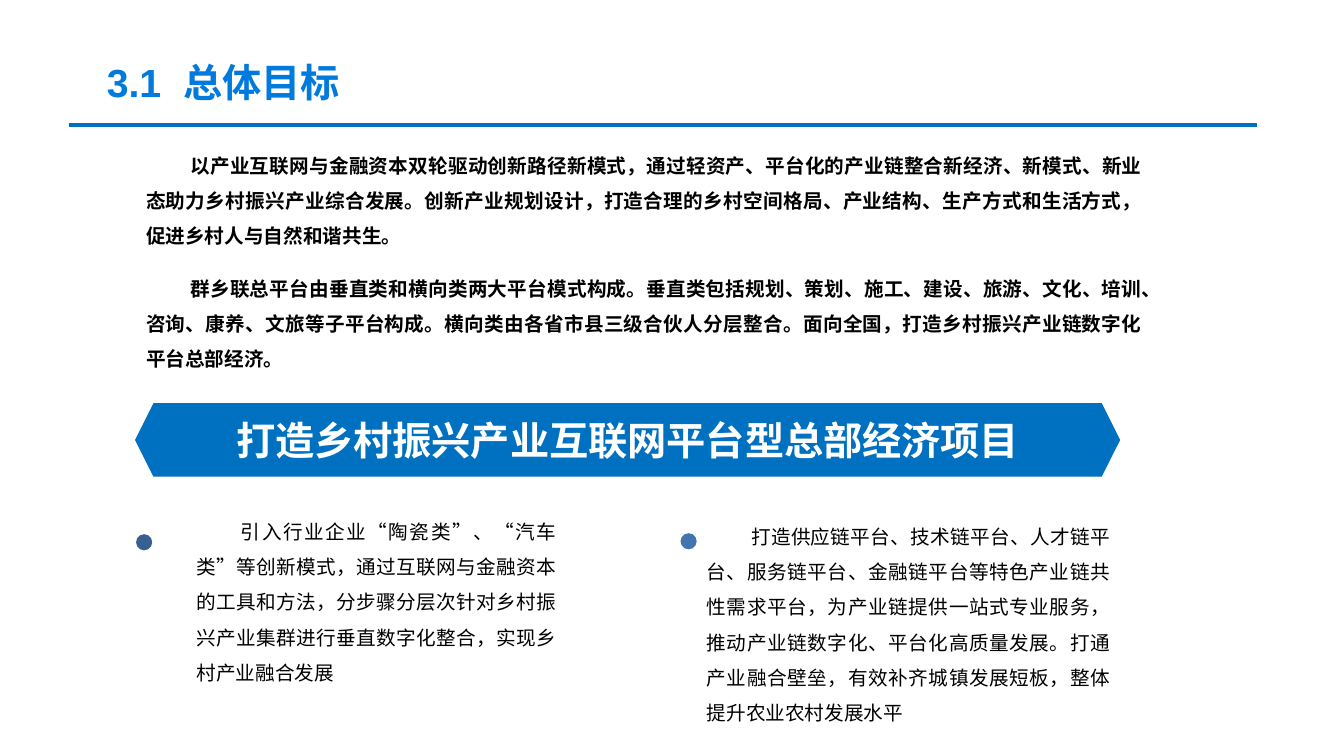
from dataclasses import dataclass

from lxml.etree import SubElement
from pptx import Presentation
from pptx.dml.color import RGBColor
from pptx.enum.shapes import MSO_CONNECTOR, MSO_SHAPE
from pptx.enum.text import MSO_ANCHOR, MSO_AUTO_SIZE, PP_ALIGN
from pptx.oxml.ns import qn
from pptx.util import Inches, Pt

COLORS = {
    "title": "007ADD",
    "blue": "0070C0",
    "black": "000000",
    "white": "FFFFFF",
    "left_dot": "376092",
    "right_dot": "4274B0",
}
FONT = "Arial"
DOT_SIZE = 0.16
TITLE_PARTS = ["3.1", " ", "总体目标"]
BANNER = "打造乡村振兴产业互联网平台型总部经济项目"
INTRO = [
    "以产业互联网与金融资本双轮驱动创新路径新模式，通过轻资产、平台化的产业链整合新经济、新模式、新业态助力乡村振兴产业综合发展。创新产业规划设计，打造合理的乡村空间格局、产业结构、生产方式和生活方式，促进乡村人与自然和谐共生。",
    "群乡联总平台由垂直类和横向类两大平台模式构成。垂直类包括规划、策划、施工、建设、旅游、文化、培训、咨询、康养、文旅等子平台构成。横向类由各省市县三级合伙人分层整合。面向全国，打造乡村振兴产业链数字化平台总部经济。",
]


@dataclass
class Point:
    placeholder: int
    left: float
    width: float
    height: float
    inset_x: float
    inset_y: float
    dot_left: float
    dot_top: float
    dot_color: str
    text: str


POINTS = [
    Point(1, 1.95, 3.57, 1.77, 0, 0, 1.35, 5.3, "left_dot",
          "引入行业企业“陶瓷类”、“汽车类”等创新模式，通过互联网与金融资本的工具和方法，分步骤分层次针对乡村振兴产业集群进行垂直数字化整合，实现乡村产业融合发展"),
    Point(2, 6.91, 4.2, 2.22, 0.1, 0.05, 6.75, 5.29, "right_dot",
          "打造供应链平台、技术链平台、人才链平台、服务链平台、金融链平台等特色产业链共性需求平台，为产业链提供一站式专业服务，推动产业链数字化、平台化高质量发展。打通产业融合壁垒，有效补齐城镇发展短板，整体提升农业农村发展水平"),
]


def color(name: str) -> RGBColor:
    return RGBColor.from_string(COLORS[name])


def place(box, left: float, top: float, width: float, height: float) -> None:
    box.left, box.top = Inches(left), Inches(top)
    box.width, box.height = Inches(width), Inches(height)


def set_frame(frame, inset_x: float, inset_y: float, anchor=MSO_ANCHOR.TOP) -> None:
    frame.word_wrap = True
    frame.auto_size = MSO_AUTO_SIZE.NONE
    frame.vertical_anchor = anchor
    frame.margin_left = frame.margin_right = Inches(inset_x)
    frame.margin_top = frame.margin_bottom = Inches(inset_y)


def set_font(para, size: float, color_name: str, bold: bool) -> None:
    para.font.name = FONT
    para.font.size = Pt(size)
    para.font.bold = bold
    para.font.color.rgb = color(color_name)


def write_body(frame, texts: list[str], bold: bool) -> None:
    for index, text in enumerate(texts):
        para = frame.paragraphs[0] if index == 0 else frame.add_paragraph()
        para.text = text
        para.alignment = PP_ALIGN.JUSTIFY
        para.line_spacing = 1.5
        para.space_before = Pt(6 if index else 0)
        para.space_after = Pt(6)
        properties = para._p.get_or_add_pPr()
        properties.set("marL", "0")
        properties.set("indent", str(Inches(0.44)))
        SubElement(properties, qn("a:buNone"))
        set_font(para, 14, "black", bold)


def add_solid(page, kind, left: float, top: float, width: float, height: float, fill: str):
    shape = page.shapes.add_shape(kind, Inches(left), Inches(top), Inches(width), Inches(height))
    shape.shadow.inherit = False
    shape.fill.solid()
    shape.fill.fore_color.rgb = color(fill)
    shape.line.fill.background()
    return shape


def add_title(page) -> None:
    title = page.shapes.title
    place(title, 0.96, 0.53, 2.75, 0.57)
    set_frame(title.text_frame, 0.1, 0.05)
    para = title.text_frame.paragraphs[0]
    para.alignment = PP_ALIGN.LEFT
    for part in TITLE_PARTS:
        span = para.add_run()
        span.text = part
        if part == " ":
            span._r.get_or_add_rPr().set("spc", "780")
    set_font(para, 28, "title", True)


def add_rule(page) -> None:
    rule = page.shapes.add_connector(
        MSO_CONNECTOR.STRAIGHT, Inches(0.68), Inches(1.24), Inches(12.47), Inches(1.24))
    rule.line.color.rgb = color("blue")
    rule.line.width = Pt(3.25)
    SubElement(rule._element.spPr, qn("a:effectLst"))


def add_banner(page) -> None:
    banner = add_solid(page, MSO_SHAPE.HEXAGON, 1.34, 4, 9.77, 0.73, "blue")
    banner.adjustments[0] = 0.25
    set_frame(banner.text_frame, 0, 0, MSO_ANCHOR.MIDDLE)
    para = banner.text_frame.paragraphs[0]
    para.text = BANNER
    para.alignment = PP_ALIGN.CENTER
    set_font(para, 28, "white", True)


def add_intro(page) -> None:
    intro = page.shapes.add_textbox(Inches(1.35), Inches(1.36), Inches(10.08), Inches(2.39))
    set_frame(intro.text_frame, 0.1, 0.05)
    write_body(intro.text_frame, INTRO, True)


def add_point(page, point: Point) -> None:
    add_solid(page, MSO_SHAPE.OVAL, point.dot_left, point.dot_top, DOT_SIZE, DOT_SIZE, point.dot_color)
    box = page.placeholders[point.placeholder]
    place(box, point.left, 5.04, point.width, point.height)
    set_frame(box.text_frame, point.inset_x, point.inset_y)
    write_body(box.text_frame, [point.text], False)


def main() -> None:
    deck = Presentation()
    deck.slide_width, deck.slide_height = Inches(13.33), Inches(7.5)
    page = deck.slides.add_slide(deck.slide_layouts[3])
    add_rule(page)
    add_title(page)
    add_intro(page)
    add_banner(page)
    for point in POINTS:
        add_point(page, point)
    deck.save("out.pptx")


if __name__ == "__main__":
    main()
